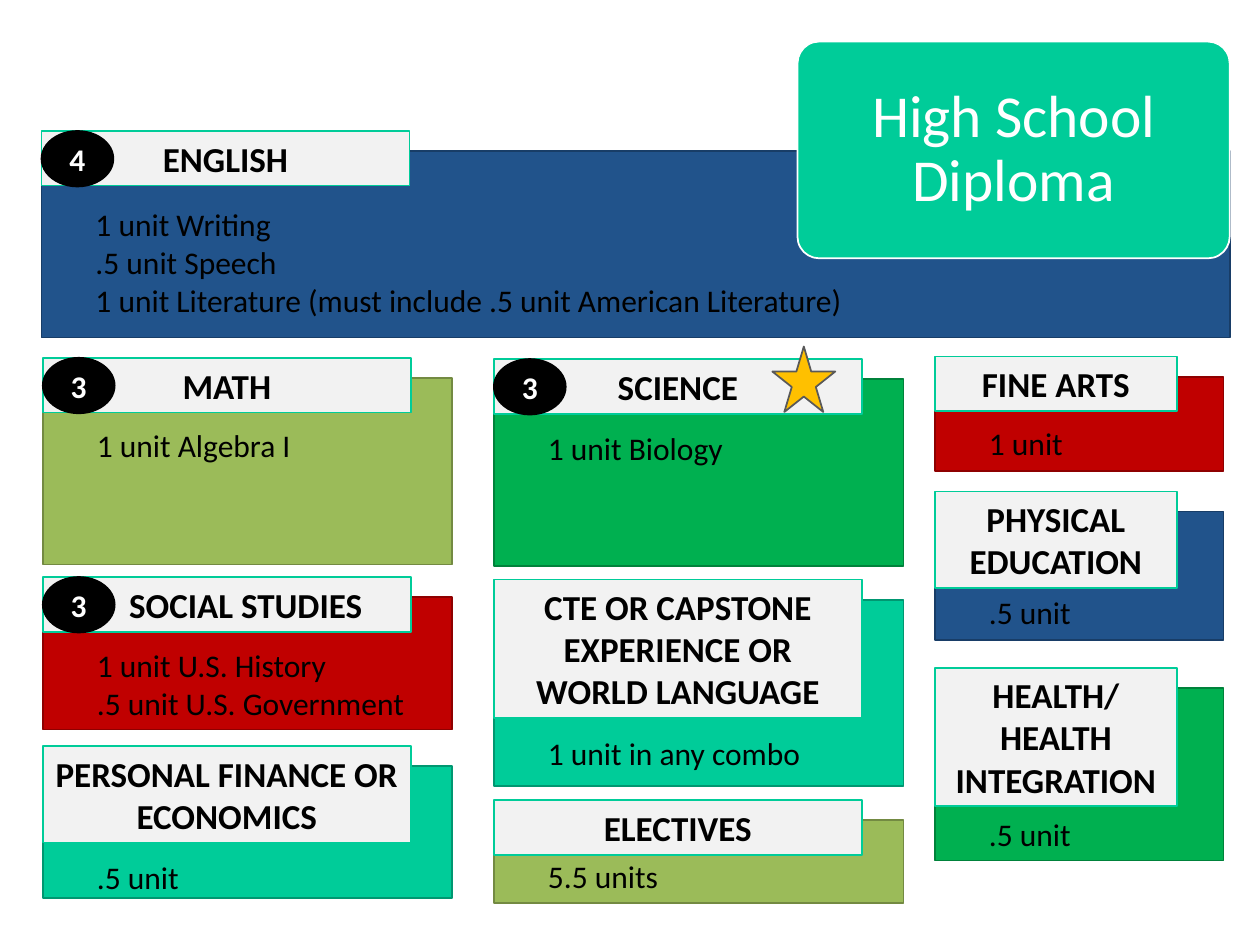
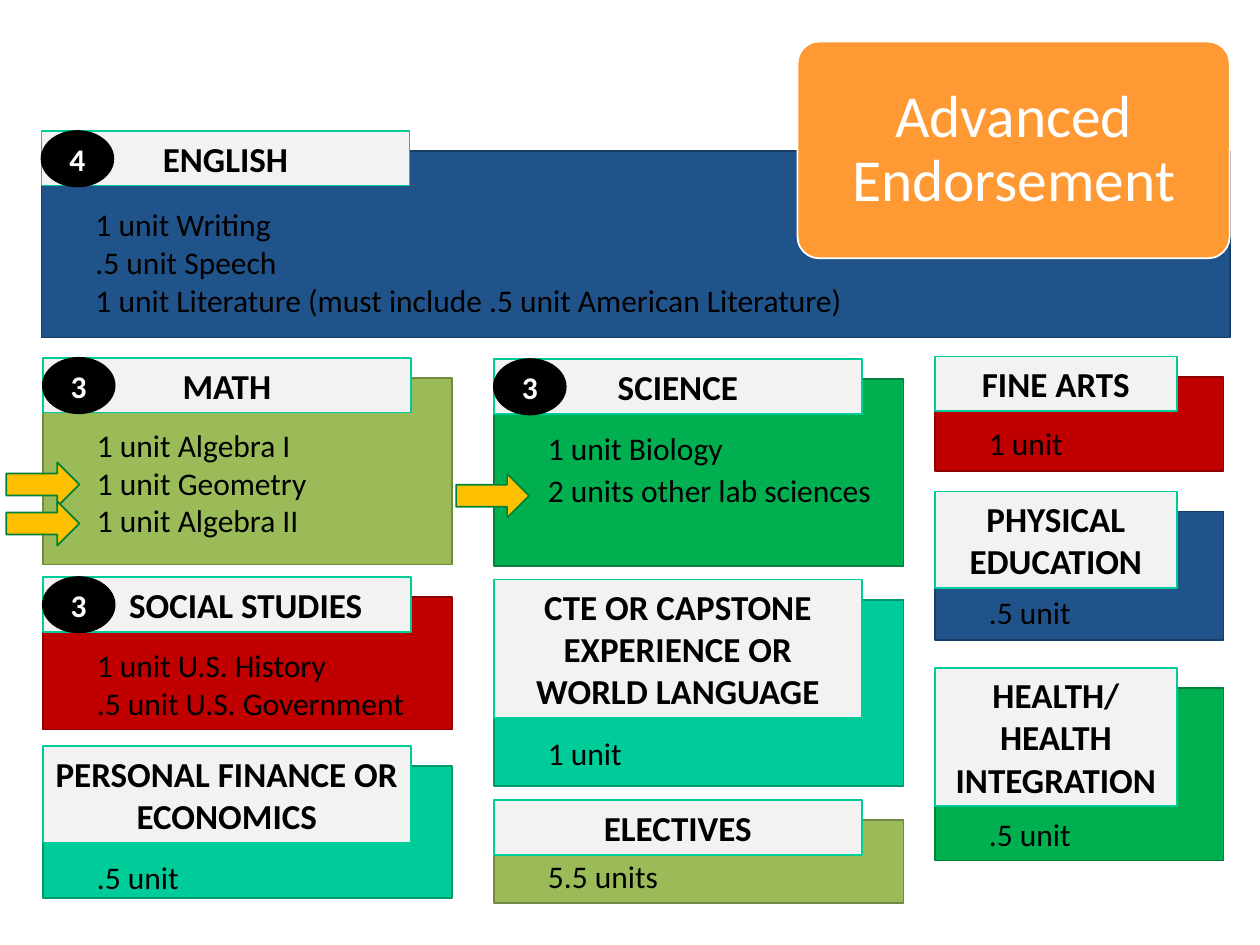
from pptx import Presentation
from pptx.dml.color import RGBColor
from pptx.enum.shapes import MSO_SHAPE
from pptx.enum.text import MSO_ANCHOR, MSO_AUTO_SIZE, PP_ALIGN
from pptx.util import Inches, Pt

BLACK = RGBColor(0x00, 0x00, 0x00)
WHITE = RGBColor(0xFF, 0xFF, 0xFF)
PALE = RGBColor(0xF2, 0xF2, 0xF2)
GRAY = RGBColor(0x59, 0x59, 0x59)
GOLD = RGBColor(0xFF, 0xC0, 0x00)
ORANGE = RGBColor(0xFF, 0x99, 0x33)
BLUE = RGBColor(0x21, 0x53, 0x8B)
OLIVE = RGBColor(0x9B, 0xBB, 0x59)
GREEN = RGBColor(0x00, 0xB0, 0x50)
RED = RGBColor(0xC0, 0x00, 0x00)
TEAL = RGBColor(0x00, 0xCC, 0x99)
DARK_GREEN = RGBColor(0x00, 0x82, 0x3B)
EDGES = {
    BLUE: RGBColor(0x18, 0x3D, 0x67),
    OLIVE: RGBColor(0x73, 0x8A, 0x42),
    GREEN: DARK_GREEN,
    RED: RGBColor(0x8E, 0x00, 0x00),
    TEAL: RGBColor(0x00, 0x97, 0x71),
}
FONT = "Calibri"

# Column: left, header width, band width, text width
FULL = (0.33, 2.92, 9.43, 7.63)
LEFT = (0.34, 2.92, 3.25, 2.91)
MIDDLE = (3.92, 2.92, 3.25, 2.83)
RIGHT = (7.42, 1.92, 2.29, 2.02)
BAND_DROP = 0.16    # from header top to band top
TEXT_INDENT = 0.33
BADGE_W, BADGE_H = 0.57, 0.44
ARROW_W, ARROW_H = 0.58, 0.35
CARD = (6.33, 0.33, 3.43, 1.72)
CARD_PAD = 0.05

# Subject: column, header top, header lines, heading, band height, colour,
#          text top, requirements, units badge
SUBJECTS = [
    (FULL, 1.04, 1, ["ENGLISH"], 1.48, BLUE, 1.58,
     ["1 unit Writing", ".5 unit Speech",
      "1 unit Literature (must include .5 unit American Literature)"], "4"),
    (LEFT, 2.84, 1, ["MATH"], 1.48, OLIVE, 3.33, ["1 unit Algebra I"], "3"),
    (MIDDLE, 2.85, 1, ["SCIENCE"], 1.48, GREEN, 3.36, ["1 unit Biology"], "3"),
    (LEFT, 4.58, 1, ["SOCIAL STUDIES"], 1.05, RED, 5.08,
     ["1 unit U.S. History", ".5 unit U.S. Government"], "3"),
    (RIGHT, 2.83, 1, ["FINE ARTS"], 0.75, RED, 3.32, ["1 unit"], None),
    (RIGHT, 3.9, 2, ["PHYSICAL", "EDUCATION"], 1.02, BLUE, 4.66,
     [".5 unit"], None),
    (RIGHT, 5.3, 3, ["HEALTH/", "HEALTH INTEGRATION"], 1.37, GREEN, 6.42,
     [".5 unit"], None),
    (LEFT, 5.92, 2, ["PERSONAL FINANCE OR ECONOMICS"], 1.05, TEAL, 6.76,
     [".5 unit"], None),
    (MIDDLE, 4.6, 3, ["CTE OR CAPSTONE EXPERIENCE OR WORLD LANGUAGE"], 1.48,
     TEAL, 5.78, ["1 unit"], None),
    (MIDDLE, 6.35, 1, ["ELECTIVES"], 0.66, OLIVE, 6.75, ["5.5 units"], None),
]

# Diploma: title, card colour, added requirements, changed requirements,
#          arrows (left, top), stars (left, top)
DIPLOMAS = [
    ("High School Diploma", TEAL, {},
     {"CTE OR CAPSTONE EXPERIENCE OR WORLD LANGUAGE": ["1 unit in any combo"]},
     [], [(6.13, 2.75)]),
    ("Advanced Endorsement", ORANGE,
     {"MATH": ["1 unit Geometry", "1 unit Algebra II"],
      "SCIENCE": ["2 units other lab sciences"]},
     {}, [(0.05, 3.67), (0.05, 3.98), (3.62, 3.76)], []),
]


def add_block(slide, kind, box, fill, line):
    sp = slide.shapes.add_shape(kind, *[Inches(v) for v in box])
    sp.shadow.inherit = False
    sp.fill.solid()
    sp.fill.fore_color.rgb = fill
    sp.line.color.rgb = line
    sp.line.width = Pt(1)
    return sp


def write(tf, lines, size, color=BLACK, bold=False, align=PP_ALIGN.CENTER,
          anchor=MSO_ANCHOR.TOP):
    tf.word_wrap = True
    tf.vertical_anchor = anchor
    for i, line in enumerate(lines):
        p = tf.paragraphs[0] if i == 0 else tf.add_paragraph()
        p.alignment = align
        r = p.add_run()
        r.text = line
        r.font.name = FONT
        r.font.size = Pt(size)
        r.font.bold = bold
        r.font.color.rgb = color


prs = Presentation()
prs.slide_width, prs.slide_height = Inches(10), Inches(7.5)

for title, card_color, added, changed, arrows, stars in DIPLOMAS:
    slide = prs.slides.add_slide(prs.slide_layouts[5])

    for (column, top, rows, heading, band_h, color, text_top,
         units, badge) in SUBJECTS:
        left, header_w, band_w, text_w = column
        name = heading[0]
        add_block(slide, MSO_SHAPE.RECTANGLE,
                  (left, top + BAND_DROP, band_w, band_h), color, EDGES[color])

        header = add_block(slide, MSO_SHAPE.RECTANGLE,
                           (left, top, header_w, 0.1 + rows / 3), PALE, TEAL)
        write(header.text_frame, heading, 20, bold=True)
        header.text_frame.auto_size = MSO_AUTO_SIZE.SHAPE_TO_FIT_TEXT
        if name == "SOCIAL STUDIES":  # wide heading, kept clear of its badge
            header.text_frame.margin_left = Inches(0.4)

        lines = changed.get(name, units) + added.get(name, [])
        tb = slide.shapes.add_textbox(
            Inches(left + TEXT_INDENT), Inches(text_top),
            Inches(text_w), Inches(0.1 + 0.3 * len(lines)))
        write(tb.text_frame, lines, 18, align=PP_ALIGN.LEFT)
        if name == "SCIENCE":
            for p in tb.text_frame.paragraphs[1:]:
                p.space_before = Pt(2)

        if badge:
            oval = add_block(slide, MSO_SHAPE.OVAL,
                             (left, top, BADGE_W, BADGE_H), BLACK, BLACK)
            write(oval.text_frame, [badge], 18, WHITE, bold=True,
                  anchor=MSO_ANCHOR.MIDDLE)

    for x, y in arrows:
        add_block(slide, MSO_SHAPE.RIGHT_ARROW, (x, y, ARROW_W, ARROW_H),
                  GOLD, DARK_GREEN)
    for x, y in stars:
        add_block(slide, MSO_SHAPE.STAR_5_POINT, (x, y, 0.5, 0.52), GOLD, GRAY)

    card = add_block(slide, MSO_SHAPE.ROUNDED_RECTANGLE, CARD, card_color, WHITE)
    card.adjustments[0] = 0.1

    sp = slide.shapes.title
    x, y, w, h = CARD
    sp.left, sp.top = Inches(x + CARD_PAD), Inches(y + CARD_PAD)
    sp.width, sp.height = Inches(w - 2 * CARD_PAD), Inches(h - 2 * CARD_PAD)
    tf = sp.text_frame
    tf.margin_left = tf.margin_right = Inches(0.02)
    tf.margin_top = tf.margin_bottom = Inches(0.02)
    write(tf, [title], 34, WHITE, anchor=MSO_ANCHOR.MIDDLE)
    tf.auto_size = MSO_AUTO_SIZE.NONE
    tf.paragraphs[0].line_spacing = 0.9
    card.element.addnext(sp.element)  # title lies on top of its card

prs.save("out.pptx")
